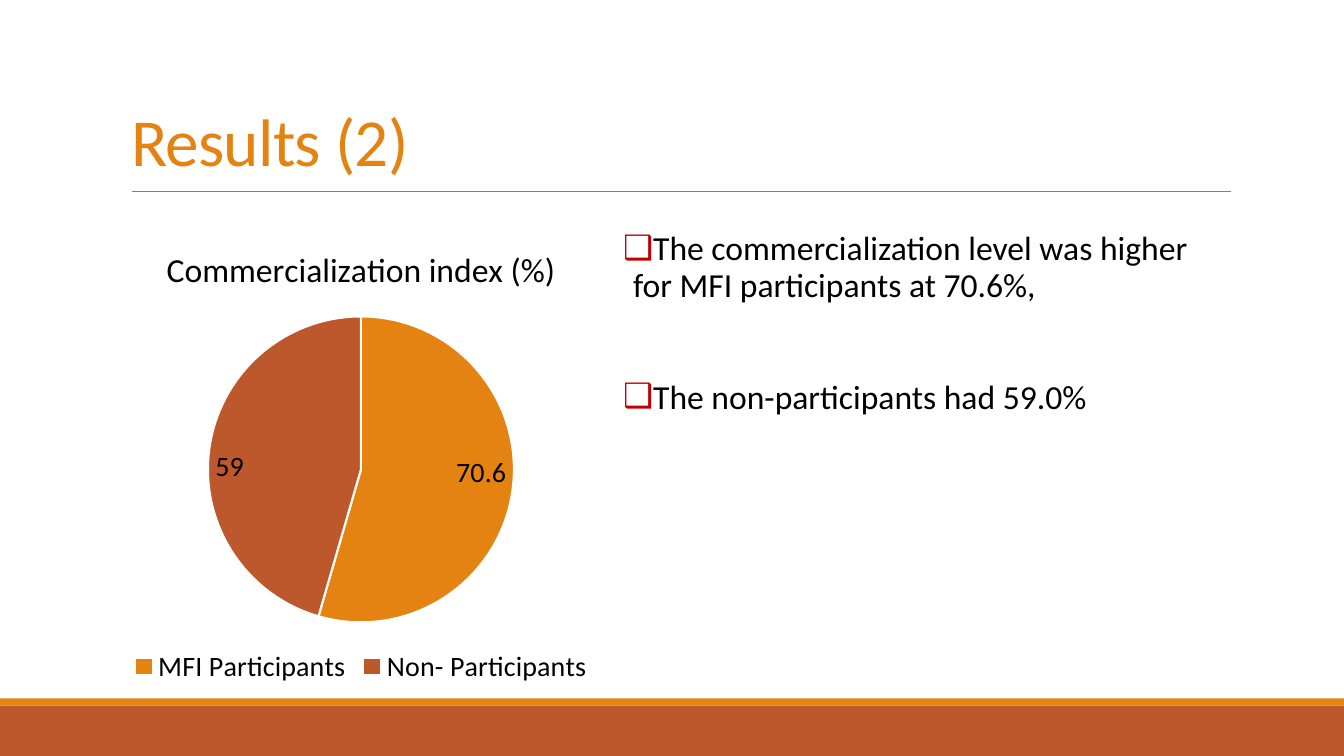
from lxml import etree
from pptx import Presentation
from pptx.chart.data import CategoryChartData
from pptx.dml.color import RGBColor
from pptx.enum.chart import XL_CHART_TYPE, XL_LABEL_POSITION, XL_LEGEND_POSITION
from pptx.enum.shapes import MSO_CONNECTOR, MSO_SHAPE
from pptx.enum.text import MSO_ANCHOR, MSO_AUTO_SIZE, PP_ALIGN
from pptx.oxml.ns import qn
from pptx.util import Inches, Pt

FONT = "Calibri"
COLORS = {"orange": "E48312", "rust": "BD582C", "rule": "808080",
          "black": "000000", "white": "FFFFFF", "bullet": "C00000"}
TITLE = "Results (2)"
POINTS = [
    ("The commercialization level was higher for MFI participants at 70.6%,", 12),
    ("The non-participants had 59.0%", 52),
]
INDEX = "Commercialization index (%)"
SHARES = [("MFI Participants", 70.6, "orange"), ("Non- Participants", 59, "rust")]
BARS = [(7, 0.5, "rust"), (6.93, 0.07, "orange")]
WIDTH, HEIGHT = 13.33, 7.5
TOP, DEPTH = 2.25, 4.59


def color(name):
    return RGBColor.from_string(COLORS[name])


def style(font, size, name="black"):
    font.name = FONT
    font.size = Pt(size)
    font.bold = False
    font.color.rgb = color(name)


def place(shape, left, top, width, height):
    shape.left, shape.top = Inches(left), Inches(top)
    shape.width, shape.height = Inches(width), Inches(height)


def add_bars(slide):
    for top, height, name in BARS:
        bar = slide.shapes.add_shape(MSO_SHAPE.RECTANGLE, 0, Inches(top),
                                     Inches(WIDTH), Inches(height))
        bar.shadow.inherit = False
        bar.fill.solid()
        bar.fill.fore_color.rgb = color(name)
        bar.line.fill.background()
    rule = slide.shapes.add_connector(MSO_CONNECTOR.STRAIGHT, Inches(1.31), Inches(1.9),
                                      Inches(12.21), Inches(1.9))
    rule.line.color.rgb = color("rule")
    rule.line.width = Pt(0.5)
    etree.SubElement(rule._element.spPr, qn("a:effectLst"))


def fill_title(shape):
    place(shape, 1.2, 0.31, 11, 1.53)
    frame = shape.text_frame
    frame.auto_size = MSO_AUTO_SIZE.NONE
    frame.vertical_anchor = MSO_ANCHOR.BOTTOM
    para = frame.paragraphs[0]
    para.alignment = PP_ALIGN.LEFT
    para.line_spacing = 0.85
    run = para.add_run()
    run.text = TITLE
    style(run.font, 48, "orange")
    run._r.get_or_add_rPr().set("spc", "-50")


def add_bullet(para):
    props = para._p.get_or_add_pPr()
    props.set("marL", str(Inches(0.1)))
    props.set("indent", str(-Inches(0.1)))
    tint = etree.SubElement(props, qn("a:buClr"))
    etree.SubElement(tint, qn("a:srgbClr")).set("val", COLORS["bullet"])
    etree.SubElement(props, qn("a:buChar")).set("char", "❑")


def fill_body(shape):
    place(shape, 6.18, TOP, 5.78, DEPTH)
    frame = shape.text_frame
    frame.auto_size = MSO_AUTO_SIZE.NONE
    frame.margin_left = frame.margin_right = 0
    for i, (text, gap) in enumerate(POINTS):
        para = frame.add_paragraph() if i else frame.paragraphs[0]
        para.line_spacing = 0.9
        para.space_before = Pt(gap)
        para.space_after = Pt(2)
        add_bullet(para)
        run = para.add_run()
        run.text = text
        style(run.font, 24)


def add_pie(slide):
    data = CategoryChartData()
    data.categories = [name for name, _, _ in SHARES]
    data.add_series(INDEX, [value for _, value, _ in SHARES])
    chart = slide.shapes.add_chart(XL_CHART_TYPE.PIE, Inches(0.98), Inches(TOP),
                                   Inches(5.2), Inches(DEPTH), data).chart
    style(chart.font, 20)
    chart.has_title = True
    run = chart.chart_title.text_frame.paragraphs[0].add_run()
    run.text = INDEX
    style(run.font, 24)
    chart.chart_title.include_in_layout = False
    chart.has_legend = True
    chart.legend.position = XL_LEGEND_POSITION.BOTTOM
    chart.legend.include_in_layout = False
    style(chart.legend.font, 20)
    plot = chart.plots[0]
    plot.vary_by_categories = True
    plot.has_data_labels = True
    labels = plot.data_labels
    labels.show_value = True
    labels.show_percentage = False
    labels.position = XL_LABEL_POSITION.INSIDE_END
    style(labels.font, 20)
    for i, (_, _, name) in enumerate(SHARES):
        form = plot.series[0].points[i].format
        form.fill.solid()
        form.fill.fore_color.rgb = color(name)
        form.line.color.rgb = color("white")
        form.line.width = Pt(1.5)


def main():
    deck = Presentation()
    deck.slide_width, deck.slide_height = Inches(WIDTH), Inches(HEIGHT)
    slide = deck.slides.add_slide(deck.slide_layouts[1])
    add_bars(slide)
    fill_title(slide.shapes.title)
    add_pie(slide)
    fill_body(slide.placeholders[1])
    deck.save("out.pptx")


if __name__ == "__main__":
    main()
